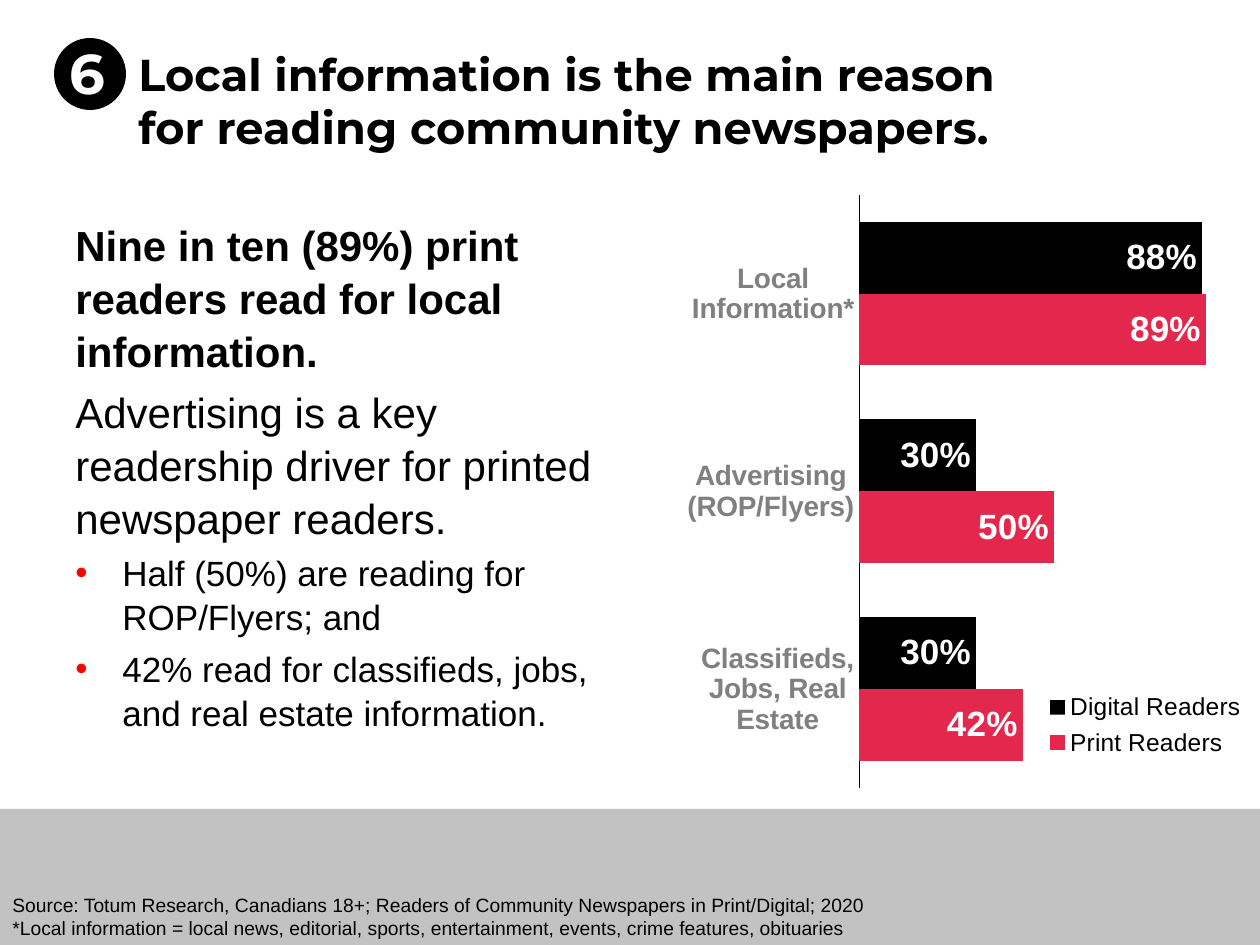
import pptx
import pptx.chart.data
import pptx.dml.color
import pptx.enum.chart
import pptx.enum.shapes
import pptx.enum.text
import pptx.oxml
import pptx.oxml.ns
import pptx.util

SCALE = 914400 / 126
COLORS = {"black": "000000", "white": "FFFFFF", "red": "E4284D",
          "bullet": "FF0000", "gray": "808080", "band": "C2C2C2"}
Anchor = pptx.enum.text.MSO_ANCHOR
Shape = pptx.enum.shapes.MSO_SHAPE


def px(n):
    """Turn pixels into EMU."""
    return pptx.util.Emu(round(n * SCALE))


def rgb(name):
    """Look up a colour by name."""
    return pptx.dml.color.RGBColor.from_string(COLORS[name])


def xml(tag, body="", attrs="", prefix="a"):
    """Parse one element with its namespace declared."""
    ns = pptx.oxml.ns.nsdecls(prefix)
    return pptx.oxml.parse_xml(f"<{prefix}:{tag} {ns} {attrs}>{body}</{prefix}:{tag}>")


def style_font(font, size, color="black", bold=False, name="Arial"):
    """Set the face, size, weight and colour of a font."""
    font.name = name
    font.size = pptx.util.Pt(size)
    font.bold = bold
    font.color.rgb = rgb(color)


def add_block(s, x, y, w, h, fill, kind=Shape.RECTANGLE):
    """Add a plain filled shape without outline or shadow."""
    sp = s.shapes.add_shape(kind, px(x), px(y), px(w), px(h))
    sp.shadow.inherit = False
    sp.fill.solid()
    sp.fill.fore_color.rgb = rgb(fill)
    sp.line.fill.background()


def add_text(s, x, y, w, h, lines, anchor=Anchor.TOP, **style):
    """Add a text box with one run per paragraph and return its frame."""
    tf = s.shapes.add_textbox(px(x), px(y), px(w), px(h)).text_frame
    tf.word_wrap = True
    tf.vertical_anchor = anchor
    for i, line in enumerate(lines):
        p = tf.add_paragraph() if i else tf.paragraphs[0]
        r = p.add_run()
        r.text = line
        style_font(r.font, **style)
    return tf


def add_header(s, x, y):
    """Place the numbered badge and the title."""
    add_block(s, x, y, 72, 72, "black", Shape.OVAL)
    add_text(s, x + 3, y - 6, 83, 81, ["6"], size=32, color="white",
             bold=True, name="Montserrat")
    add_text(s, x + 72, y + 2, 950, 120,
             ["Local information is the main reason for reading community newspapers."],
             Anchor.MIDDLE, size=25.5, bold=True, name="Montserrat")


def add_body(s, x, y, w, h):
    """Place the key statements and their bullets."""
    lines = ["Nine in ten (89%) print readers read for local information.",
             "Advertising is a key readership driver for printed newspaper readers.",
             "Half (50%) are reading for ROP/Flyers; and",
             "42% read for classifieds, jobs, and real estate information."]
    tf = add_text(s, x, y, w, h, lines, size=24)
    tf.paragraphs[0].runs[0].font.bold = True
    for i, p in enumerate(tf.paragraphs):
        p.line_spacing = 1.05
        if i:
            p.space_before = pptx.util.Pt(4.8 if i == 1 else 4)
        if i > 1:
            p.runs[0].font.size = pptx.util.Pt(20)
            pPr = p._p.get_or_add_pPr()
            pPr.set("marL", str(px(47)))
            pPr.set("indent", str(-px(47)))
            pPr.append(xml("buClr", f'<a:srgbClr val="{COLORS["bullet"]}"/>'))
            pPr.append(xml("buFont", attrs='typeface="Arial"'))
            pPr.append(xml("buChar", attrs='char="•"'))


def manual_layout(x, y, w, h, target=""):
    """Build a manual chart layout from fractions of the chart."""
    modes = '<c:xMode val="edge"/><c:yMode val="edge"/>'
    sizes = "".join(f'<c:{k} val="{v}"/>' for k, v in zip("xywh", (x, y, w, h)))
    return xml("layout", f"<c:manualLayout>{target}{modes}{sizes}</c:manualLayout>",
               prefix="c")


def replace_layout(parent, layout, index):
    """Swap the layout of a chart part for a new one."""
    for old in parent.findall(pptx.oxml.ns.qn("c:layout")):
        parent.remove(old)
    parent.insert(index, layout)


def add_reader_chart(s, x, y, w, h):
    """Place the bar chart of reasons by type of reader."""
    data = pptx.chart.data.CategoryChartData(number_format="0%")
    data.categories = ["Classifieds, Jobs, Real Estate", "Advertising (ROP/Flyers)",
                       "Local Information*"]
    data.add_series("Print Readers", (0.42, 0.5, 0.89))
    data.add_series("Digital Readers", (0.3, 0.3, 0.88))
    kind = pptx.enum.chart.XL_CHART_TYPE.BAR_CLUSTERED
    chart = s.shapes.add_chart(kind, px(x), px(y), px(w), px(h), data).chart
    style_font(chart.font, 13.5)
    chart.has_title = False

    axis = chart.category_axis
    axis.major_tick_mark = pptx.enum.chart.XL_TICK_MARK.NONE
    axis.format.line.color.rgb = rgb("black")
    axis.format.line.width = pptx.util.Pt(0.75)
    style_font(axis.tick_labels.font, 16, "gray", True)
    values = chart.value_axis
    values.minimum_scale, values.maximum_scale = 0, 1
    values.has_major_gridlines = False
    values.visible = False

    plot = chart.plots[0]
    plot.gap_width = 75
    plot.overlap = 0
    plot.vary_by_categories = False
    for series, color in zip(plot.series, ("red", "black")):
        series.format.fill.solid()
        series.format.fill.fore_color.rgb = rgb(color)
        labels = series.data_labels
        labels.show_value = True
        labels.number_format = "0%"
        labels.number_format_is_linked = False
        labels.position = pptx.enum.chart.XL_LABEL_POSITION.INSIDE_END
        style_font(labels.font, 20, "white", True)

    chart.has_legend = True
    legend = chart.legend
    legend.position = pptx.enum.chart.XL_LEGEND_POSITION.RIGHT
    legend.include_in_layout = False
    style_font(legend.font, 14)
    replace_layout(legend._element, manual_layout(0.66, 0.82, 0.34, 0.13), 1)
    inner = '<c:layoutTarget val="inner"/>'
    replace_layout(chart._chartSpace.chart.plotArea,
                   manual_layout(0.36, 0, 0.64, 0.99, inner), 0)


def add_footer(s, x, y, w, h):
    """Place the footer band and the source note at its bottom."""
    add_block(s, x, y, w, h, "band")
    add_text(s, x, y + 78, 954, 59,
             ["Source: Totum Research, Canadians 18+; Readers of Community Newspapers "
              "in Print/Digital; 2020",
              "*Local information = local news, editorial, sports, entertainment, "
              "events, crime features, obituaries"], size=11)


def main():
    """Build the slide and save it."""
    prs = pptx.Presentation()
    prs.slide_width, prs.slide_height = px(1260), px(945)
    s = prs.slides.add_slide(prs.slide_layouts[6])
    add_footer(s, 0, 809, 1260, 136)
    add_header(s, 54, 38)
    add_reader_chart(s, 640, 194, 609, 600)
    add_body(s, 63, 211, 542, 590)
    prs.save("out.pptx")


if __name__ == "__main__":
    main()
